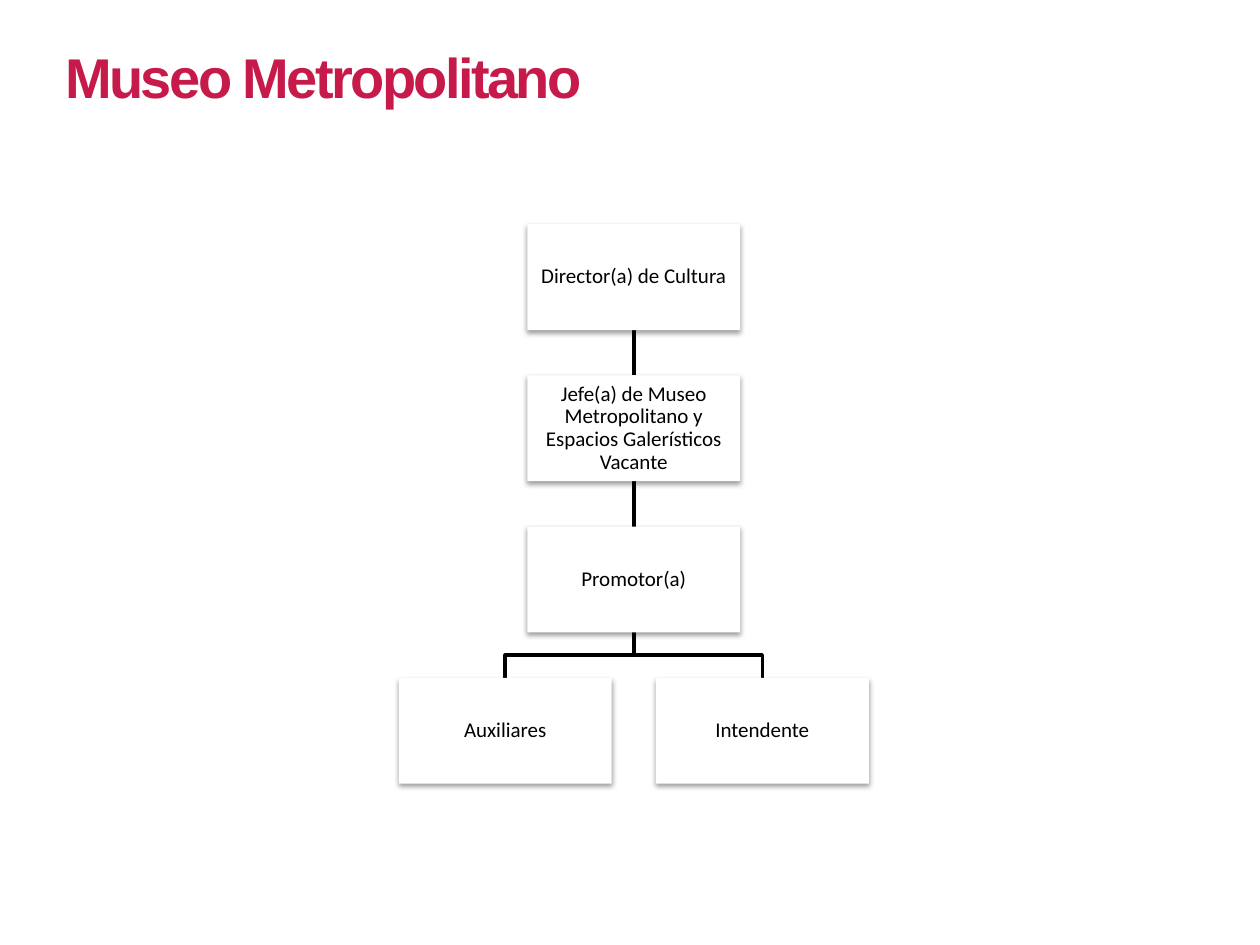
from dataclasses import dataclass
from typing import Any

from lxml import etree
from pptx import Presentation
from pptx import util as u
from pptx.dml.color import RGBColor
from pptx.enum import shapes, text
from pptx.oxml import ns

COLORS = {"title": "C51A4A", "ink": "000000", "box": "FFFFFF"}
BOX_W, BOX_H = 1.69, 0.84
CENTER, TOP, STEP = 5.03, 1.78, 1.2
BRANCH = 1.02


@dataclass
class OrgChart:
    """Draws an organisation chart in one style on the current slide."""

    slide: Any
    line_width: float = 2
    title_font: str = "Arial"
    box_font: str = "Calibri"

    def color(self, name):
        return RGBColor.from_string(COLORS[name])

    def style_run(self, run, font, size, color, bold=False):
        run.font.name = font
        run.font.size = u.Pt(size)
        run.font.bold = bold
        run.font.color.rgb = self.color(color)

    def title(self, wording):
        heading = self.slide.shapes.add_textbox(
            u.Inches(0.42), u.Inches(0.29), u.Inches(6.81), u.Inches(0.64))
        heading.text_frame.word_wrap = True
        heading.text_frame.text = wording
        run = heading.text_frame.paragraphs[0].runs[0]
        self.style_run(run, self.title_font, 32, "title", True)
        run.font._element.set("spc", "-150")

    def stroke(self, link):
        link.line.color.rgb = self.color("ink")
        link.line.width = u.Pt(self.line_width)

    def stem(self, x, top, bottom):
        link = self.slide.shapes.add_connector(
            shapes.MSO_CONNECTOR.STRAIGHT,
            u.Inches(x), u.Inches(top), u.Inches(x), u.Inches(bottom))
        self.stroke(link)
        etree.SubElement(link._element.spPr, ns.qn("a:effectLst"))

    def elbow(self, x, top, end_x, bottom):
        middle = (top + bottom) / 2
        outline = self.slide.shapes.build_freeform(u.Inches(x), u.Inches(top))
        bends = [(x, middle), (end_x, middle), (end_x, bottom)]
        outline.add_line_segments(
            [(u.Inches(px), u.Inches(py)) for px, py in bends], close=False)
        link = outline.convert_to_shape()
        link.shadow.inherit = False
        link.fill.background()
        self.stroke(link)

    def cast_shadow(self, box):
        box.shadow.inherit = False
        effects = box._element.spPr.find(ns.qn("a:effectLst"))
        shadow = etree.SubElement(
            effects, ns.qn("a:outerShdw"), blurRad=str(u.Pt(3.1)),
            dist=str(u.Pt(1.6)), dir="5400000", rotWithShape="0")
        tint = etree.SubElement(shadow, ns.qn("a:srgbClr"), val=COLORS["ink"])
        etree.SubElement(tint, ns.qn("a:alpha"), val="38000")

    def box(self, wording, center, top):
        post = self.slide.shapes.add_shape(
            shapes.MSO_SHAPE.RECTANGLE, u.Inches(center - BOX_W / 2),
            u.Inches(top), u.Inches(BOX_W), u.Inches(BOX_H))
        post.fill.solid()
        post.fill.fore_color.rgb = self.color("box")
        post.line.fill.background()
        self.cast_shadow(post)
        frame = post.text_frame
        frame.word_wrap = True
        frame.vertical_anchor = text.MSO_ANCHOR.MIDDLE
        frame.margin_left = frame.margin_right = u.Inches(0.01)
        frame.margin_top = frame.margin_bottom = u.Inches(0.01)
        frame.text = wording
        label = frame.paragraphs[0]
        label.alignment = text.PP_ALIGN.CENTER
        label.line_spacing = 0.9
        self.style_run(label.runs[0], self.box_font, 12, "ink")


def main():
    deck = Presentation()
    deck.slide_width, deck.slide_height = u.Inches(10), u.Inches(7.5)
    chart = OrgChart(deck.slides.add_slide(deck.slide_layouts[6]))
    chart.title("Museo Metropolitano")

    chain = ["Director(a) de Cultura",
             "Jefe(a) de Museo Metropolitano y Espacios Galerísticos Vacante",
             "Promotor(a)"]
    team = {"Auxiliares": CENTER - BRANCH, "Intendente": CENTER + BRANCH}
    levels = [TOP + STEP * level for level in range(len(chain) + 1)]

    for center in team.values():
        chart.elbow(CENTER, levels[-2] + BOX_H, center, levels[-1])
    for upper, lower in zip(levels[:-2], levels[1:-1]):
        chart.stem(CENTER, upper + BOX_H, lower)
    for wording, top in zip(chain, levels):
        chart.box(wording, CENTER, top)
    for wording, center in team.items():
        chart.box(wording, center, levels[-1])

    deck.save("out.pptx")


if __name__ == "__main__":
    main()
